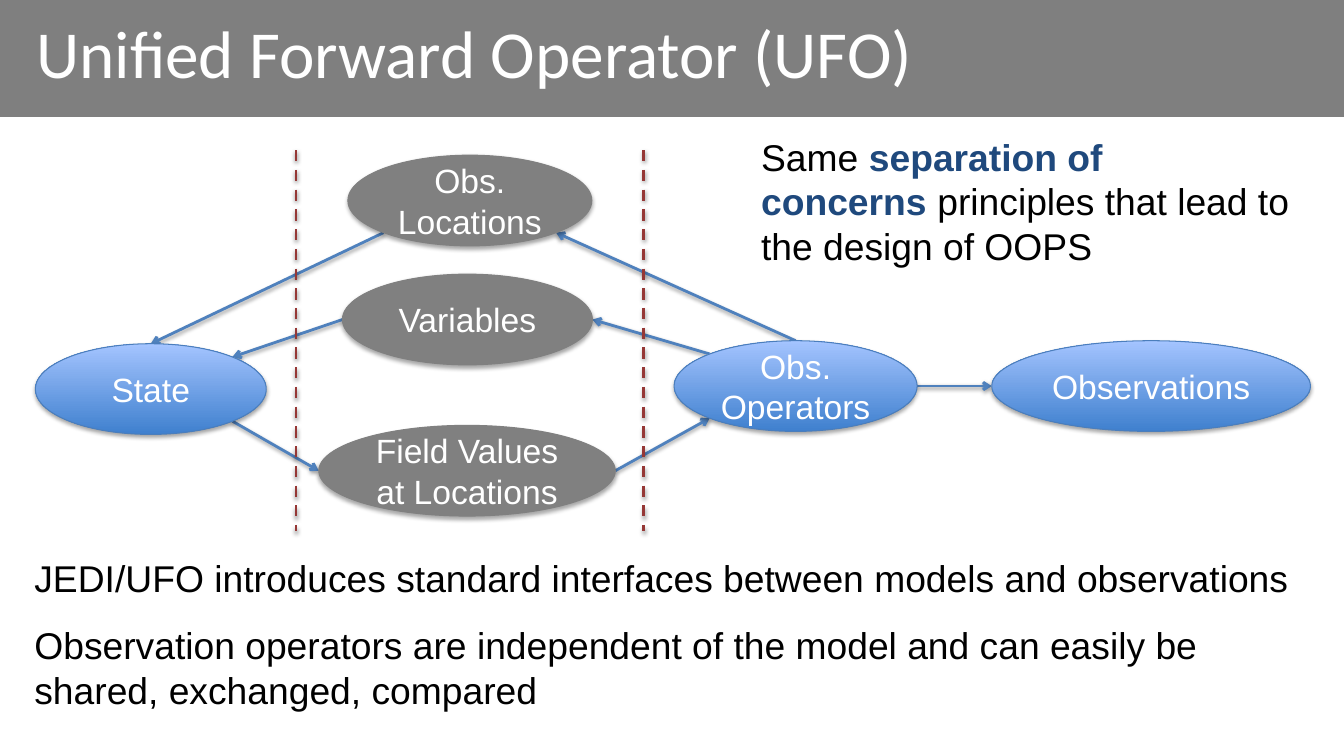
from dataclasses import dataclass
from math import cos, sin, radians
from lxml.etree import SubElement
from pptx import Presentation
from pptx.dml.color import RGBColor as RGB
from pptx.enum.dml import MSO_LINE_DASH_STYLE as Dash
from pptx.enum.shapes import MSO_CONNECTOR as Conn, MSO_SHAPE as Shape
from pptx.enum.text import MSO_ANCHOR as Anchor, PP_ALIGN as Align
from pptx.oxml.ns import qn
from pptx.util import Inches, Pt


@dataclass
class Theme:
    white: str = "FFFFFF"
    black: str = "000000"
    navy: str = "1F497D"
    gray: str = "808080"
    low: str = "3F80CE"
    high: str = "A4C4FF"
    rim: str = "4B7EBC"
    arrow: str = "4F81BD"
    wall: str = "953735"
    head: str = "Calibri"
    body: str = "Arial"
    big: float = 48
    mid: float = 26.6
    small: float = 24


T = Theme()

# Content; places are percent of the slide's width and height
TITLE = "Unified Forward Operator (UFO)"
BAND = (0, 0, 100, 15.47)
HEAD = (1.95, 0, 83.42, 13.6)
OVAL_H = 12
# name: (lines, centre x, centre y, width, is blue)
OVALS = {
    "state": (["State"], 11.22, 51.47, 17.18, True),
    "ops": (["Obs. Operators"], 59.2, 51.07, 18.08, True),
    "loc": (["Obs. Locations"], 34.96, 26.53, 18.15, False),
    "vars": (["Variables"], 34.78, 42.27, 18.6, False),
    "field": (["Field Values", "at Locations"], 34.75, 62.27, 22.06, False),
    "obs": (["Observations"], 85.65, 51.07, 23.71, True),
}
# Flow from one oval to the next, with the side as a compass point
FLOWS = [
    ("ops", "N", "loc", "SE"), ("ops", "NW", "vars", "E"),
    ("vars", "W", "state", "NE"), ("loc", "SW", "state", "N"),
    ("state", "SE", "field", "W"), ("field", "E", "ops", "SW"),
    ("ops", "E", "obs", "W"),
]
WALLS = (22.02, 47.9)
WALL_Y = (19.87, 70.27)
# Each box: place, space between paragraphs, paragraphs of (text, colour, bold);
# BREAK starts a new line
BREAK = ("\n", T.black, False)
BOXES = [
    ((1.82, 72.8, 95.87, 22.27), 16, [
        [("JEDI/UFO introduces standard interfaces between models and "
          "observations", T.black, False)],
        [("Observation operators are independent of the model and can easily "
          "be shared, exchanged, compared", T.black, False)]]),
    ((55.89, 17.07, 43.29, 19.33), 0, [
        [("Same ", T.black, False),
         ("separation of", T.navy, True),
         BREAK,
         ("concerns ", T.navy, True),
         ("principles that lead to the design of OOPS", T.black, False)]]),
]

deck = Presentation()
deck.slide_width, deck.slide_height = Inches(13.33), Inches(7.5)
slide = deck.slides.add_slide(deck.slide_layouts[5])
shapes = slide.shapes


def across(pct):
    return round(deck.slide_width * pct / 100)


def down(pct):
    return round(deck.slide_height * pct / 100)


def area(x, y, w, h):
    return across(x), down(y), across(w), down(h)


def write(para, text, size, color, font=T.body, bold=False):
    run = para.add_run()
    run.text = text
    run.font.name, run.font.size, run.font.bold = font, Pt(size), bold
    run.font.color.rgb = RGB.from_string(color)


def paras(frame, count):
    return [frame.paragraphs[0]] + [frame.add_paragraph()
                                    for _ in range(count - 1)]


def shade(shape, dist, alpha):
    props = shape.element.spPr
    effect = props.find(qn("a:effectLst"))
    if effect is None:
        effect = SubElement(props, qn("a:effectLst"))
    drop = SubElement(effect, qn("a:outerShdw"), blurRad=str(Pt(3.1)),
                      dist=str(Pt(dist)), dir="5400000", rotWithShape="0")
    tint = SubElement(drop, qn("a:srgbClr"), val=T.black)
    SubElement(tint, qn("a:alpha"), val=str(alpha * 1000))


def draw_oval(lines, x, y, w, blue):
    oval = shapes.add_shape(Shape.OVAL,
                            *area(x - w / 2, y - OVAL_H / 2, w, OVAL_H))
    oval.shadow.inherit = False
    if blue:
        oval.fill.gradient()
        oval.fill.gradient_angle = 90
        for stop, color in zip(oval.fill.gradient_stops, (T.low, T.high)):
            stop.color.rgb = RGB.from_string(color)
    else:
        oval.fill.solid()
        oval.fill.fore_color.rgb = RGB.from_string(T.gray)
    oval.line.color.rgb = RGB.from_string(T.rim if blue else T.gray)
    oval.line.width = Pt(0.75)
    shade(oval, 1.8, 35)
    frame = oval.text_frame
    frame.word_wrap, frame.vertical_anchor = True, Anchor.MIDDLE
    for para, text in zip(paras(frame, len(lines)), lines):
        para.alignment = Align.CENTER
        write(para, text, T.small, T.white)


def draw_line(start, end, color):
    line = shapes.add_connector(Conn.STRAIGHT, across(start[0]),
                                down(start[1]), across(end[0]), down(end[1]))
    line.line.color.rgb = RGB.from_string(color)
    line.line.width = Pt(2)
    shade(line, 1.6, 38)
    return line


def rim(name, side):
    """Point on an oval's edge, by compass point."""
    _, x, y, w, _ = OVALS[name]
    turn = radians(45 * ["E", "SE", "S", "SW", "W", "NW", "N", "NE"].index(side))
    return x + w / 2 * cos(turn), y + OVAL_H / 2 * sin(turn)


# Title on its band
band = shapes.add_shape(Shape.RECTANGLE, *area(*BAND))
band.shadow.inherit = False
band.fill.solid()
band.fill.fore_color.rgb = RGB.from_string(T.black)
ink = band.element.spPr.find(qn("a:solidFill"))[0]
SubElement(ink, qn("a:alpha"), val="50000")
band.line.fill.background()
title = shapes.title
title.element.addprevious(band.element)
title.left, title.top, title.width, title.height = area(*HEAD)
title.text_frame.vertical_anchor = Anchor.MIDDLE
top = title.text_frame.paragraphs[0]
top.alignment = Align.LEFT
write(top, TITLE, T.big, T.white, T.head)

# Flow diagram
for start, out, end, into in FLOWS:
    flow = draw_line(rim(start, out), rim(end, into), T.arrow)
    SubElement(flow.element.spPr.find(qn("a:ln")), qn("a:tailEnd"),
               type="arrow")
for oval in OVALS.values():
    draw_oval(*oval)
for x in WALLS:
    wall = draw_line((x, WALL_Y[0]), (x, WALL_Y[1]), T.wall)
    wall.line.dash_style = Dash.DASH

# Text boxes
for place, gap, texts in BOXES:
    frame = shapes.add_textbox(*area(*place)).text_frame
    frame.word_wrap = True
    for i, (para, runs) in enumerate(zip(paras(frame, len(texts)), texts)):
        para.space_before = Pt(gap if i else 0)
        for run in runs:
            if run is BREAK:
                para.add_line_break()
            else:
                text, color, bold = run
                write(para, text, T.mid, color, bold=bold)

deck.save("out.pptx")
